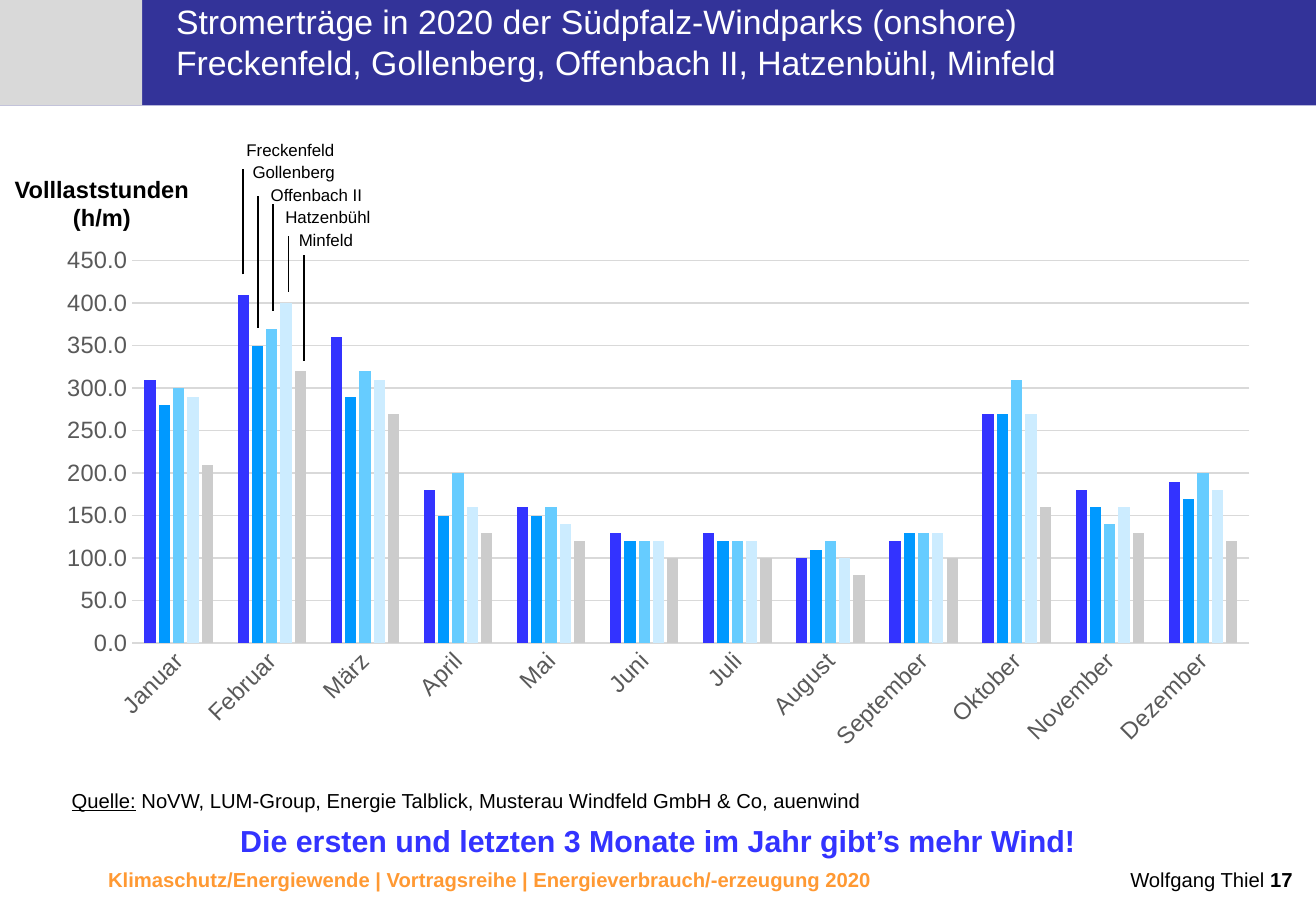
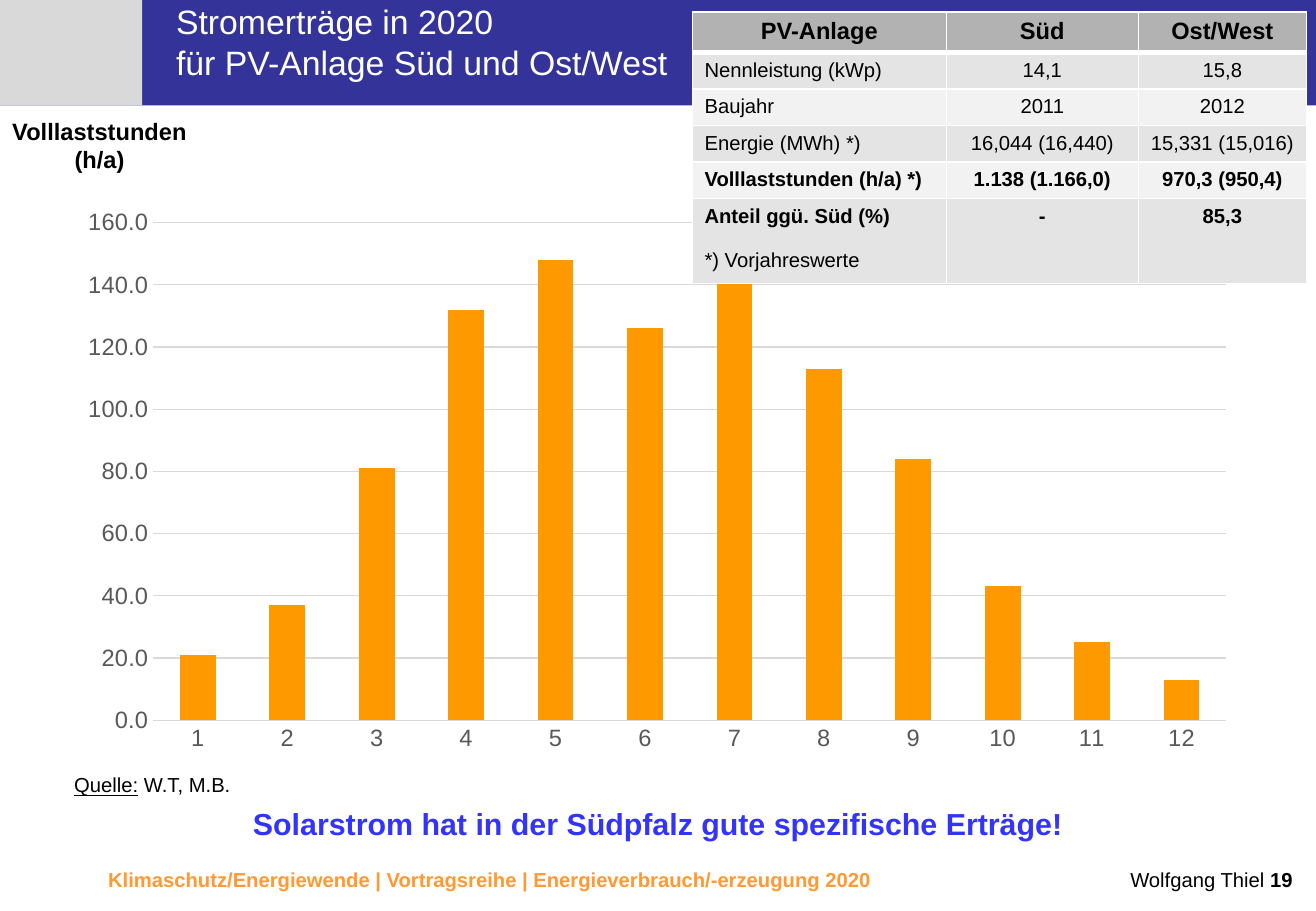
import lxml.etree
import pptx
import pptx.chart.data
import pptx.dml.color
import pptx.enum.chart
import pptx.enum.shapes
import pptx.enum.text
import pptx.oxml.ns
import pptx.util

Pt = pptx.util.Pt
qn = pptx.oxml.ns.qn
ALIGN = pptx.enum.text.PP_ALIGN
CHART = pptx.enum.chart.XL_CHART_TYPE


class Deck:
    """Slides on yields of wind and solar power in one shared style."""

    FONT = "Arial"
    WIDTH, HEIGHT = 780, 540
    COLORS = {
        "black": "000000", "white": "FFFFFF", "band": "333399", "corner": "D9D9D9",
        "footer": "FF9933", "slogan": "3333FF", "axis": "595959", "grid": "D9D9D9",
        "wind1": "3333FF", "wind2": "0099FF", "wind3": "66CCFF", "wind4": "CCECFF",
        "wind5": "CCCCCC", "solar": "FF9900",
        "head": "B2B2B2", "odd": "E4E4E4", "even": "F2F2F2",
    }

    def __init__(self):
        self.deck = pptx.Presentation()
        self.deck.slide_width, self.deck.slide_height = Pt(self.WIDTH), Pt(self.HEIGHT)
        self.slide = None

    def color(self, name):
        return pptx.dml.color.RGBColor.from_string(self.COLORS[name])

    def style(self, font, size, color="black", bold=False):
        font.name, font.size, font.bold = self.FONT, Pt(size), bold
        font.color.rgb = self.color(color)

    def start(self, title, number):
        self.slide = self.deck.slides.add_slide(self.deck.slide_layouts[6])
        self.bar(self.WIDTH, "band")
        self.text((57, 510.5, 475, 21.6),
                  ["Klimaschutz/Energiewende | Vortragsreihe | Energieverbrauch/-erzeugung 2020"],
                  12, "footer", bold=True)
        page = self.text((576.7, 512, 196.6, 20), ["Wolfgang Thiel ", number], 12,
                         align=ALIGN.RIGHT, spacing=0.9)
        page[1].font.bold = True
        self.bar(84.3, "corner")
        self.text((104.4, 0.7, 587.5, 48.2), [title], 20, "white", inset=(0, 0))

    def bar(self, width, color):
        bar = self.slide.shapes.add_shape(pptx.enum.shapes.MSO_SHAPE.RECTANGLE,
                                          0, 0, Pt(width), Pt(62.6))
        bar.shadow.inherit = False
        bar.fill.solid()
        bar.fill.fore_color.rgb = self.color(color)
        bar.line.fill.background()

    def text(self, box, parts, size, color="black", bold=False, align=ALIGN.LEFT,
             inset=(7.2, 3.6), wrap=True, spacing=None):
        frame = self.slide.shapes.add_textbox(*map(Pt, box)).text_frame
        frame.word_wrap = wrap
        frame.auto_size = pptx.enum.text.MSO_AUTO_SIZE.SHAPE_TO_FIT_TEXT
        frame.margin_left = frame.margin_right = Pt(inset[0])
        frame.margin_top = frame.margin_bottom = Pt(inset[1])
        frame.text = parts[0]
        paragraph = frame.paragraphs[0]
        paragraph.alignment = align
        if spacing:
            paragraph.line_spacing = spacing
        for part in parts[1:]:
            paragraph.add_run().text = part
        for run in paragraph.runs:
            self.style(run.font, size, color, bold)
        return paragraph.runs

    def unit(self, left, top, unit):
        self.text((left, top, 118, 41), [f"Volllaststunden\v({unit})"], 14, bold=True,
                  align=ALIGN.CENTER, wrap=False)

    def source(self, left, top, width, names):
        runs = self.text((left, top, width, 14.4), ["Quelle:", " " + names], 12,
                         inset=(0, 0), wrap=False)
        runs[0].font.underline = True

    def slogan(self, top, words):
        self.text((0, top, self.WIDTH, 31.7), [words], 18, "slogan", bold=True,
                  align=ALIGN.CENTER, inset=(5, 5))

    def line(self, x, top, bottom):
        line = self.slide.shapes.add_connector(pptx.enum.shapes.MSO_CONNECTOR.STRAIGHT,
                                               Pt(x), Pt(bottom), Pt(x), Pt(top))
        line.line.color.rgb = self.color("black")
        line.line.width = Pt(1)
        lxml.etree.SubElement(line._element.spPr, qn("a:effectLst"))

    def chart(self, box, kind, categories, series, gap, overlap, maximum, step, turn=0):
        data = pptx.chart.data.CategoryChartData()
        data.categories = categories
        for name, _, values in series:
            data.add_series(name, values)
        chart = self.slide.shapes.add_chart(kind, *map(Pt, box), data).chart
        chart.has_legend = chart.has_title = False
        self.style(chart.font, 10)
        plot = chart.plots[0]
        plot.gap_width, plot.overlap, plot.vary_by_categories = gap, overlap, False
        for bars, (_, color, _) in zip(plot.series, series):
            bars.invert_if_negative = False
            bars.format.fill.solid()
            bars.format.fill.fore_color.rgb = self.color(color)
        months, hours = chart.category_axis, chart.value_axis
        for axis in (months, hours):
            axis.major_tick_mark = axis.minor_tick_mark = pptx.enum.chart.XL_TICK_MARK.NONE
            self.style(axis.tick_labels.font, 14, "axis")
        hours.has_major_gridlines = True
        for rule in (months.format.line, hours.major_gridlines.format.line):
            rule.color.rgb = self.color("grid")
            rule.width = Pt(0.75)
        hours.format.line.fill.background()
        hours.minimum_scale, hours.maximum_scale, hours.major_unit = 0, maximum, step
        hours.tick_labels.number_format = "#,##0.0"
        hours.tick_labels.number_format_is_linked = False
        if turn:
            labels = months._element.find(qn("c:txPr")).find(qn("a:bodyPr"))
            labels.set("rot", str(turn * 60000))

    def border(self, cell, bottom):
        properties = cell._tc.get_or_add_tcPr()
        for side, width in (("L", 1), ("R", 1), ("T", 1), ("B", bottom)):
            edge = lxml.etree.SubElement(properties, qn("a:ln" + side), w=str(Pt(width)))
            fill = lxml.etree.SubElement(edge, qn("a:solidFill"))
            lxml.etree.SubElement(fill, qn("a:srgbClr"), val=self.COLORS["white"])

    def table(self, left, top, widths, heights, rows, bold_rows):
        table = self.slide.shapes.add_table(len(rows), len(widths), Pt(left), Pt(top),
                                            Pt(sum(widths)), Pt(sum(heights))).table
        table.horz_banding = False
        for column, width in zip(table.columns, widths):
            column.width = Pt(width)
        for r, (row, height) in enumerate(zip(rows, heights)):
            table.rows[r].height = Pt(height)
            shade = "head" if r == 0 else "odd" if r % 2 else "even"
            for c, words in enumerate(row):
                cell = table.cell(r, c)
                self.border(cell, 1 if r else 3)
                cell.fill.solid()
                cell.fill.fore_color.rgb = self.color(shade)
                cell.text_frame.text = words
                for n, paragraph in enumerate(cell.text_frame.paragraphs):
                    paragraph.alignment = ALIGN.LEFT if r and c == 0 else ALIGN.CENTER
                    if n:
                        paragraph.space_before = Pt(13)
                    for run in paragraph.runs:
                        self.style(run.font, 12 if r else 14, bold=r in bold_rows and n == 0)


def wind(deck):
    deck.start("Stromerträge in 2020 der Südpfalz-Windparks (onshore)\v"
               "Freckenfeld, Gollenberg, Offenbach II, Hatzenbühl, Minfeld", "17")
    deck.source(42.5, 467.3, 478, "NoVW, LUM-Group, Energie Talblick, "
                "Musterau Windfeld GmbH & Co, auenwind")
    deck.unit(1.4, 100, "h/m")
    months = ["Januar", "Februar", "März", "April", "Mai", "Juni", "Juli", "August",
              "September", "Oktober", "November", "Dezember"]
    parks = [
        ("Freckenfeld", "wind1", [310, 410, 360, 180, 160, 130, 130, 100, 120, 270, 180, 190]),
        ("Gollenberg", "wind2", [280, 350, 290, 150, 150, 120, 120, 110, 130, 270, 160, 170]),
        ("Offenbach II", "wind3", [300, 370, 320, 200, 160, 120, 120, 120, 130, 310, 140, 200]),
        ("Hatzenbühl", "wind4", [290, 400, 310, 160, 140, 120, 120, 100, 130, 270, 160, 180]),
        ("Minfeld", "wind5", [210, 320, 270, 130, 120, 100, 100, 80, 100, 160, 130, 120]),
    ]
    deck.chart((25.2, 140.4, 730, 310.3), CHART.COLUMN_CLUSTERED, months, parks,
               219, -27, 450, 50, turn=-45)
    callouts = [(139, 67, 100, 162.7), (142.6, 63.4, 116, 194.4), (153.4, 69, 121, 184.3),
                (162, 65.5, 139.7, 172.8), (170, 46.8, 151.2, 213.8)]
    for n, ((park, _, _), (left, width, top, bottom)) in enumerate(zip(parks, callouts)):
        deck.text((left, 79.2 + 13.3 * n, width, 19.4), [park], 10, wrap=False)
        deck.line(144 + 9 * n, top, bottom)
    deck.slogan(482.4, "Die ersten und letzten 3 Monate im Jahr gibt’s mehr Wind!")


def solar(deck):
    deck.start("Stromerträge in 2020\vfür PV-Anlage Süd und Ost/West", "19")
    deck.source(44, 458, 97, "W.T, M.B.")
    deck.unit(0, 65.5, "h/a")
    yields = [21, 37, 81, 132, 148, 126, 149, 113, 84, 43, 25, 13]
    deck.chart((38.2, 117.4, 702.7, 334.8), CHART.COLUMN_STACKED,
               [str(month) for month in range(1, 13)],
               [("Volllaststunden", "solar", yields)], 150, 100, 160, 20)
    deck.table(410.4, 7.2, [150.5, 113.8, 99.7], [24] + [21.6] * 4 + [50.4], [
        ("PV-Anlage", "Süd", "Ost/West"),
        ("Nennleistung (kWp)", "14,1", "15,8"),
        ("Baujahr", "2011", "2012"),
        ("Energie (MWh) *)", "16,044 (16,440)", "15,331 (15,016)"),
        ("Volllaststunden (h/a) *)", "1.138 (1.166,0)", "970,3 (950,4)"),
        ("Anteil ggü. Süd (%)\n*) Vorjahreswerte", "-", "85,3"),
    ], bold_rows=(0, 4, 5))
    deck.slogan(472.3, "Solarstrom hat in der Südpfalz gute spezifische Erträge!")


def main():
    deck = Deck()
    wind(deck)
    solar(deck)
    deck.deck.save("out.pptx")


if __name__ == "__main__":
    main()
